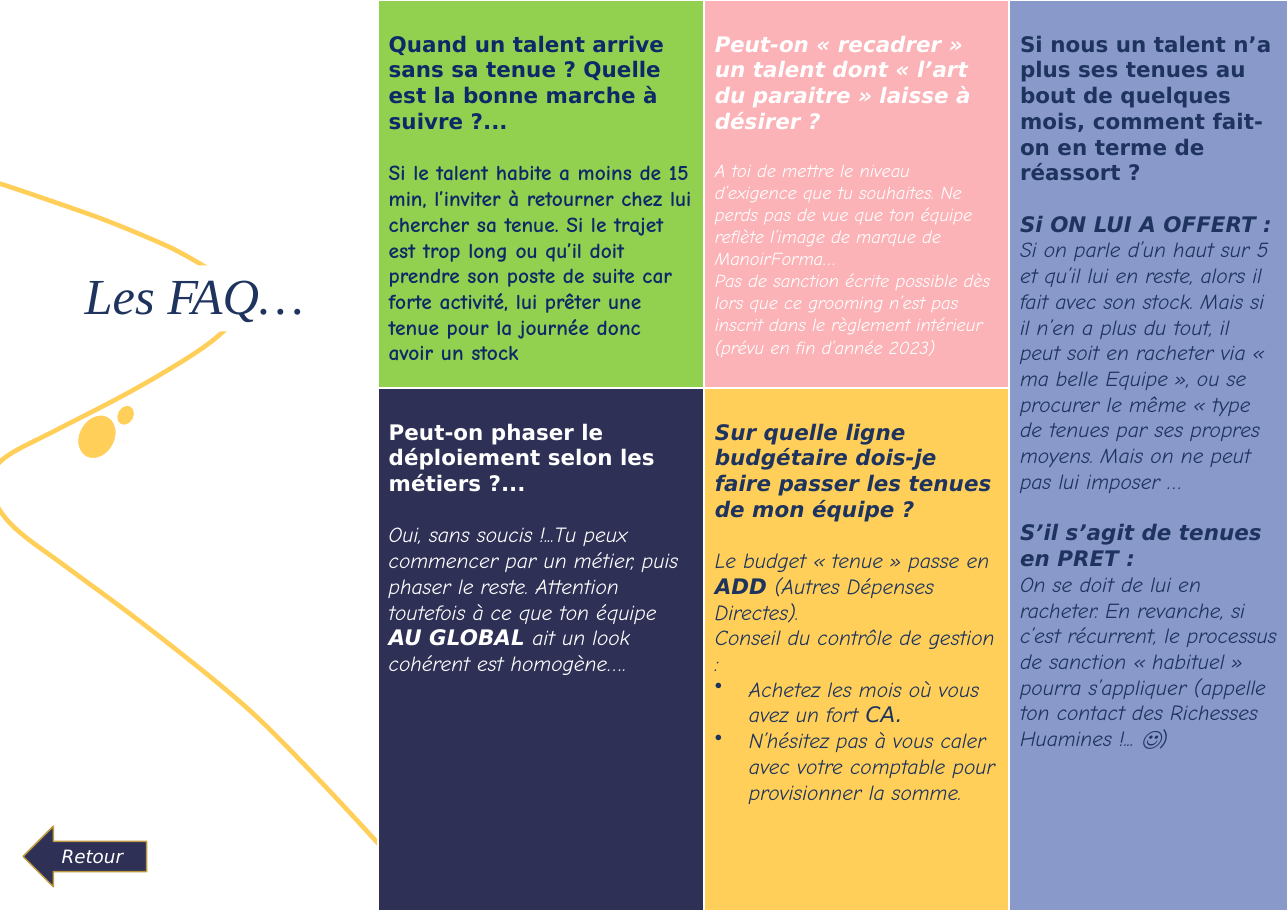
from dataclasses import dataclass
from typing import NamedTuple

from lxml import etree
from pptx import Presentation, util as u
from pptx.dml import color
from pptx.enum import shapes, text
from pptx.oxml import ns


@dataclass(frozen=True)
class Theme:
    white: str = "FFFFFF"
    gold: str = "FFCF59"
    dark_gold: str = "BD9942"
    night: str = "2E3056"
    navy: str = "1E345E"
    royal: str = "0E2967"
    green: str = "92D050"
    pink: str = "FBB3B7"
    lavender: str = "8899CA"
    title_font: str = "Times New Roman"
    heading_font: str = "DejaVu Sans"
    answer_font: str = "Comic Neue"
    title_size: float = 33
    text_size: float = 14
    small_size: float = 12
    block_gap: float = 16.8


THEME = Theme()


class Run(NamedTuple):
    words: str
    font: str = THEME.answer_font
    bold: bool = False
    italic: bool = True
    size: float = THEME.text_size


class Para(NamedTuple):
    runs: list[Run]
    gap: bool = False
    bullet: bool = False


class Box(NamedTuple):
    left: float
    top: float
    width: float
    height: float


class Panel(NamedTuple):
    box: Box
    fill: str
    ink: str
    paras: list[Para]


def heading(words: str, italic: bool = False, gap: bool = False) -> Para:
    return Para([Run(words, THEME.heading_font, True, italic)], gap)


def strong(words: str) -> Run:
    return Run(words, THEME.heading_font, True)


def rgb(code: str) -> color.RGBColor:
    return color.RGBColor.from_string(code)


def add_form(slide, kind, box: Box, fill: str, outline: str | None = None, turn: float = 0):
    form = slide.shapes.add_shape(kind, *(u.Inches(side) for side in box))
    form.shadow.inherit = False
    form.rotation = turn
    form.fill.solid()
    form.fill.fore_color.rgb = rgb(fill)
    if outline:
        form.line.color.rgb = rgb(outline)
        form.line.width = u.Pt(1)
    else:
        form.line.fill.background()
    return form


def add_run(paragraph, run: Run, ink: str) -> None:
    piece = paragraph.add_run()
    piece.text = run.words
    font = piece.font
    font.name, font.size = run.font, u.Pt(run.size)
    font.bold, font.italic = run.bold, run.italic
    font.color.rgb = rgb(ink)


def add_bullet(paragraph) -> None:
    properties = paragraph._p.get_or_add_pPr()
    properties.set("marL", str(u.Inches(0.31)))
    properties.set("indent", str(u.Inches(-0.31)))
    etree.SubElement(properties, ns.qn("a:buChar")).set("char", "•")


def add_panel(slide, panel: Panel) -> None:
    form = add_form(slide, shapes.MSO_SHAPE.RECTANGLE, panel.box, panel.fill, THEME.white)
    frame = form.text_frame
    frame.word_wrap = True
    frame.vertical_anchor = text.MSO_ANCHOR.TOP
    frame.margin_top = u.Inches(0.28)
    for index, para in enumerate(panel.paras):
        paragraph = frame.add_paragraph() if index else frame.paragraphs[0]
        if para.bullet:
            add_bullet(paragraph)
        paragraph.alignment = text.PP_ALIGN.LEFT
        if para.gap:
            paragraph.space_before = u.Pt(THEME.block_gap)
        for run in para.runs:
            add_run(paragraph, run, panel.ink)


def smooth_points(anchors: list[tuple[float, float]], steps: int = 8) -> list[tuple[int, int]]:
    """Points of a Catmull-Rom curve through the anchors, in EMU."""
    padded = [anchors[0], *anchors, anchors[-1]]
    points = []
    for before, start, end, after in zip(padded, padded[1:], padded[2:], padded[3:]):
        for t in (step / steps for step in range(steps)):
            points.append(tuple(
                u.Inches(0.5 * (2 * b + (c - a) * t + (2 * a - 5 * b + 4 * c - d) * t**2
                                + (3 * b - a - 3 * c + d) * t**3))
                for a, b, c, d in zip(before, start, end, after)))
    return points + [tuple(u.Inches(value) for value in anchors[-1])]


def add_ribbon(slide, anchors: list[tuple[float, float]]) -> None:
    first, *rest = smooth_points(anchors)
    builder = slide.shapes.build_freeform(*first)
    builder.add_line_segments(rest, close=False)
    ribbon = builder.convert_to_shape()
    ribbon.shadow.inherit = False
    ribbon.fill.background()
    ribbon.line.color.rgb = rgb(THEME.gold)
    ribbon.line.width = u.Pt(3)


def add_label(form, run: Run, ink: str, align) -> None:
    frame = form.text_frame
    frame.word_wrap = True
    frame.vertical_anchor = text.MSO_ANCHOR.MIDDLE
    frame.paragraphs[0].alignment = align
    add_run(frame.paragraphs[0], run, ink)


RIBBONS = [
    [(-0.1, 1.64), (0.07, 1.69), (0.51, 1.84), (0.96, 2), (1.42, 2.19), (1.65, 2.3), (1.91, 2.45)],
    [(2.14, 2.9), (1.92, 3.1), (1.59, 3.32), (1.12, 3.59), (0.52, 3.9), (0.08, 4.13),
     (-0.08, 4.3), (-0.09, 4.44), (0.01, 4.65), (0.2, 4.85), (0.62, 5.16), (1.36, 5.71),
     (2.2, 6.39), (2.8, 6.98), (3.38, 7.6), (3.5, 7.74)],
]
LEFT, MIDDLE, RIGHT = (3.43, 2.96), (6.39, 2.77), (9.16, 2.53)
UPPER, LOWER, FULL = (0, 3.52), (3.52, 4.75), (0, 8.27)


def cell(column: tuple[float, float], row: tuple[float, float]) -> Box:
    return Box(column[0], row[0], column[1], row[1])


PANELS = [
    Panel(cell(LEFT, UPPER), THEME.green, THEME.royal, [
        heading("Quand un talent arrive sans sa tenue ? Quelle est la bonne marche à suivre ?..."),
        Para([Run("Si le talent habite a moins de 15 min, l’inviter à retourner chez lui chercher sa "
                  "tenue. Si le trajet est trop long ou qu’il doit prendre son poste de suite car forte "
                  "activité, lui prêter une tenue pour la journée donc avoir un stock",
                  bold=True, italic=False)], gap=True)]),
    Panel(cell(MIDDLE, UPPER), THEME.pink, THEME.white, [
        heading("Peut-on « recadrer » un talent dont « l’art du paraitre » laisse à désirer ?", True),
        Para([Run("A toi de mettre le niveau d’exigence que tu souhaites. Ne perds pas de vue que ton "
                  "équipe reflète l’image de marque de ManoirForma…", size=THEME.small_size)], gap=True),
        Para([Run("Pas de sanction écrite possible dès lors que ce grooming n’est pas inscrit dans le "
                  "règlement intérieur (prévu en fin d’année 2023)", size=THEME.small_size)])]),
    Panel(cell(LEFT, LOWER), THEME.night, THEME.white, [
        heading("Peut-on phaser le déploiement selon les métiers ?..."),
        Para([Run("Oui, sans soucis !...Tu peux commencer par un métier, puis phaser le reste. "
                  "Attention toutefois à ce que ton équipe "),
              strong("AU GLOBAL "), Run("ait un look cohérent est homogène….")], gap=True)]),
    Panel(cell(MIDDLE, LOWER), THEME.gold, THEME.navy, [
        heading("Sur quelle ligne budgétaire dois-je faire passer les tenues de mon équipe ?", True),
        Para([Run("Le budget « tenue » passe en "), strong("ADD"),
              Run(" (Autres Dépenses Directes).")], gap=True),
        Para([Run("Conseil du contrôle de gestion :")]),
        Para([Run("Achetez les mois où vous avez un fort "), Run("CA.", THEME.heading_font)], bullet=True),
        Para([Run("N’hésitez pas à vous caler avec votre comptable pour provisionner la somme.")],
             bullet=True)]),
    Panel(cell(RIGHT, FULL), THEME.lavender, THEME.navy, [
        heading("Si nous un talent n’a plus ses tenues au bout de quelques mois, comment fait-on en "
                "terme de réassort ?"),
        heading("Si ON LUI A OFFERT :", True, gap=True),
        Para([Run("Si on parle d’un haut sur 5 et qu’il lui en reste, alors il fait avec son stock. Mais "
                  "si il n’en a plus du tout, il peut soit en racheter via « ma belle Equipe », ou se "
                  "procurer le même « type de tenues par ses propres moyens. Mais on ne peut pas lui "
                  "imposer …")]),
        heading("S’il s’agit de tenues en PRET :", True, gap=True),
        Para([Run("On se doit de lui en racheter. En revanche, si c’est récurrent, le processus de "
                  "sanction « habituel » pourra s’appliquer (appelle ton contact des Richesses "
                  "Huamines !... ☺)")])]),
]


def main() -> None:
    deck = Presentation()
    deck.slide_width, deck.slide_height = u.Inches(11.69), u.Inches(8.27)
    slide = deck.slides.add_slide(deck.slide_layouts[6])
    for anchors in RIBBONS:
        add_ribbon(slide, anchors)
    kinds = shapes.MSO_SHAPE
    add_form(slide, kinds.OVAL, Box(0.67, 3.8, 0.42, 0.33), THEME.gold, THEME.white, 118.8)
    add_form(slide, kinds.OVAL, Box(1.05, 3.7, 0.18, 0.14), THEME.gold, turn=118.8)
    title = add_form(slide, kinds.RECTANGLE, Box(0.67, 2.41, 2.62, 0.6), THEME.white)
    add_label(title, Run("Les FAQ…", THEME.title_font, size=THEME.title_size), THEME.navy,
              text.PP_ALIGN.LEFT)
    title.text_frame.paragraphs[0].line_spacing = 0.9
    for panel in PANELS:
        add_panel(slide, panel)
    back = add_form(slide, kinds.LEFT_ARROW, Box(0.21, 7.5, 1.12, 0.55), THEME.night, THEME.dark_gold)
    add_label(back, Run("Retour", THEME.heading_font, size=THEME.small_size), THEME.white,
              text.PP_ALIGN.CENTER)
    deck.save("out.pptx")


if __name__ == "__main__":
    main()
